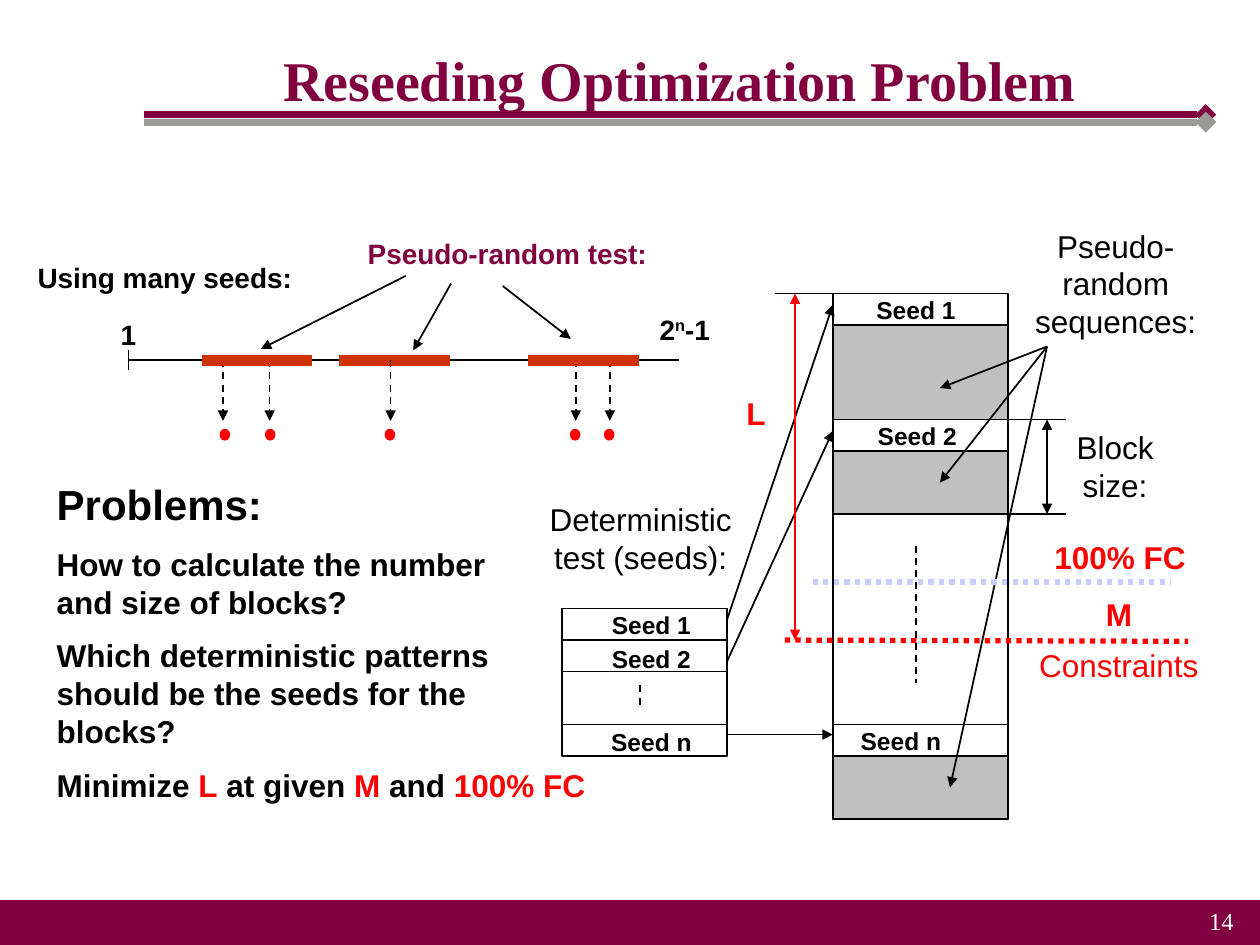
from dataclasses import dataclass
from typing import Optional

from pptx import Presentation
from pptx.dml.color import RGBColor
from pptx.enum.dml import MSO_LINE
from pptx.enum.shapes import MSO_CONNECTOR, MSO_SHAPE
from pptx.enum.text import MSO_ANCHOR, MSO_AUTO_SIZE, PP_ALIGN
from pptx.oxml.ns import qn
from pptx.util import Inches, Pt
from lxml.etree import SubElement

BLACK, WHITE, RED = "000000", "FFFFFF", "FF0000"
WINE, SILVER, GRAY, ORANGE, LILAC = "800040", "9B9A98", "C0C0C0", "CC3300", "CCCCFF"
DASH, DOTS = MSO_LINE.DASH, MSO_LINE.ROUND_DOT


@dataclass
class Line:
    x1: float
    y1: float
    x2: float
    y2: float
    color: str = BLACK
    width: float = 1
    dash: Optional[MSO_LINE] = None
    head: str = ""
    tail: str = ""


@dataclass
class Label:
    text: str
    left: float
    top: float
    width: float
    height: float
    size: float = 18
    color: str = BLACK
    bold: bool = False
    align: PP_ALIGN = PP_ALIGN.CENTER
    font: str = "Arial"


def rgb(color: str) -> RGBColor:
    return RGBColor.from_string(color)


def draw_line(item: Line) -> None:
    connector = slide.shapes.add_connector(
        MSO_CONNECTOR.STRAIGHT,
        Inches(item.x1), Inches(item.y1), Inches(item.x2), Inches(item.y2))
    connector.line.color.rgb = rgb(item.color)
    connector.line.width = Pt(item.width)
    if item.dash is not None:
        connector.line.dash_style = item.dash
    properties = connector._element.spPr
    outline = properties.find(qn("a:ln"))
    for tag, kind in (("a:headEnd", item.head), ("a:tailEnd", item.tail)):
        if kind:
            SubElement(outline, qn(tag), type=kind)
    SubElement(properties, qn("a:effectLst"))


def draw_arrow(x1: float, y1: float, x2: float, y2: float) -> None:
    draw_line(Line(x1, y1, x2, y2, tail="triangle"))


def draw_shape(kind: MSO_SHAPE, left: float, top: float, width: float, height: float,
               fill: str, outline: str = BLACK) -> None:
    shape = slide.shapes.add_shape(
        kind, Inches(left), Inches(top), Inches(width), Inches(height))
    shape.shadow.inherit = False
    shape.fill.solid()
    shape.fill.fore_color.rgb = rgb(fill)
    shape.line.color.rgb = rgb(outline)
    shape.line.width = Pt(1)


def add_run(paragraph, text: str, size: float, color: str, bold: bool, font: str = "Arial"):
    run = paragraph.add_run()
    run.text = text
    run.font.name, run.font.size, run.font.bold = font, Pt(size), bold
    run.font.color.rgb = rgb(color)
    return run


def draw_label(item: Label):
    box = slide.shapes.add_textbox(
        Inches(item.left), Inches(item.top), Inches(item.width), Inches(item.height))
    box.text_frame.word_wrap = True
    paragraph = box.text_frame.paragraphs[0]
    paragraph.alignment = item.align
    add_run(paragraph, item.text, item.size, item.color, item.bold, item.font)
    return paragraph


def place(holder, left: float, top: float, width: float, height: float):
    holder.left, holder.top = Inches(left), Inches(top)
    holder.width, holder.height = Inches(width), Inches(height)
    frame = holder.text_frame
    frame.auto_size, frame.word_wrap = MSO_AUTO_SIZE.NONE, True
    return frame


presentation = Presentation()
presentation.slide_width, presentation.slide_height = Inches(10), Inches(7.5)
slide = presentation.slides.add_slide(presentation.slide_layouts[1])

# Title, its double rule and the footer band
for rule_y, rule_color in ((0.91, WINE), (0.97, SILVER)):
    draw_line(Line(1.14, rule_y, 9.57, rule_y, rule_color, 4, tail="diamond"))
draw_shape(MSO_SHAPE.RECTANGLE, 0, 7.15, 10, 0.36, WINE, WINE)
draw_label(Label("14", 8.62, 7.14, 1.27, 0.52, 14, WHITE,
                 align=PP_ALIGN.RIGHT, font="Times New Roman"))
heading = place(slide.shapes.title, 0.51, 0, 9.77, 1.25)
heading.vertical_anchor = MSO_ANCHOR.MIDDLE
heading.paragraphs[0].alignment = PP_ALIGN.CENTER
add_run(heading.paragraphs[0], "Reseeding Optimization Problem", 32, WINE, True,
        "Times New Roman")

# List of problems: each paragraph is a size and its (text, colour) runs
problems = [
    (24, [("Problems:", BLACK)]),
    (18, [("How to calculate the number", BLACK), None, ("and size of blocks?", BLACK)]),
    (18, [("Which deterministic patterns should be the seeds for the blocks?", BLACK)]),
    (18, [("Minimize ", BLACK), ("L", RED), (" at given ", BLACK), ("M ", RED),
          ("and ", BLACK), ("100% FC", RED)]),
]
problem_list = place(slide.placeholders[1], 0.35, 3.75, 4.41, 2.76)
problem_list.vertical_anchor = MSO_ANCHOR.TOP
for index, (size, pieces) in enumerate(problems):
    paragraph = problem_list.add_paragraph() if index else problem_list.paragraphs[0]
    properties = paragraph._p.get_or_add_pPr()
    properties.set("marL", "0")
    properties.set("indent", "0")
    SubElement(properties, qn("a:buNone"))
    paragraph.alignment = PP_ALIGN.LEFT
    paragraph.space_before = Pt(9 if index else 0)
    for piece in pieces:
        if piece is None:
            paragraph.add_line_break()
        else:
            add_run(paragraph, piece[0], size, piece[1], True)

# Time axis with test segments and the patterns they hit
AXIS_Y, SEGMENT = 2.86, 0.88
draw_line(Line(1.02, AXIS_Y, 5.39, AXIS_Y))
draw_line(Line(1.02, 2.78, 1.02, 2.94))


def draw_segment(left: float) -> None:
    draw_line(Line(left, AXIS_Y, left + SEGMENT, AXIS_Y, ORANGE, 6))


draw_segment(2.69)
for drop_x, dot_left in ((1.77, 1.75), (2.14, 2.11), (3.1, 3.06), (4.57, 4.53), (4.84, 4.8)):
    draw_line(Line(drop_x, AXIS_Y, drop_x, 3.34, dash=DASH, tail="triangle"))
    draw_shape(MSO_SHAPE.OVAL, dot_left, 3.41, 0.07, 0.08, RED, RED)
for segment_left in (1.6, 4.19):
    draw_segment(segment_left)
for pointer in ((3.22, 2.19, 2.07, 2.77), (3.58, 2.25, 3.28, 2.78), (3.99, 2.27, 4.53, 2.69)):
    draw_arrow(*pointer)
draw_label(Label("Using many seeds:", 0.2, 2.02, 2.36, 0.37, 16, bold=True, align=PP_ALIGN.LEFT))
draw_label(Label("Pseudo-random test:", 2.82, 1.83, 2.57, 0.37, 16, WINE, True, PP_ALIGN.LEFT))
draw_label(Label("1", 0.8, 2.47, 0.44, 0.37, 16, bold=True))
axis_end = draw_label(Label("2", 5.11, 2.43, 0.65, 0.37, 16, bold=True))
exponent = add_run(axis_end, "n", 16, BLACK, True)
exponent.font._element.set("baseline", "30000")
add_run(axis_end, "-1", 16, BLACK, True)

# Stored seeds
STORE_LEFT, STORE_RIGHT = 4.46, 5.77
draw_shape(MSO_SHAPE.RECTANGLE, STORE_LEFT, 4.83, STORE_RIGHT - STORE_LEFT, 1.17, WHITE)
for row_y in (5.08, 5.33, 5.75):
    draw_line(Line(STORE_LEFT, row_y, STORE_RIGHT, row_y))
draw_line(Line(5.08, 5.44, 5.08, 5.61, dash=DASH))

# Full test sequence: each seed row is followed by its pseudo-random block
TEST_LEFT, TEST_RIGHT = 6.61, 8
TEST_WIDTH = TEST_RIGHT - TEST_LEFT
draw_shape(MSO_SHAPE.RECTANGLE, TEST_LEFT, 2.33, TEST_WIDTH, 4.17, WHITE)
for block_top, block_height in ((2.58, 0.75), (3.58, 0.5), (6, 0.5)):
    draw_shape(MSO_SHAPE.RECTANGLE, TEST_LEFT, block_top, TEST_WIDTH, block_height, GRAY)
draw_line(Line(TEST_LEFT, 5.75, TEST_RIGHT, 5.75))
draw_line(Line(7.27, 4.33, 7.27, 5.42, dash=DASH))
for stored_y, used_y in ((4.92, 2.42), (5.25, 3.42), (5.83, 5.83)):
    draw_arrow(STORE_RIGHT, stored_y, TEST_LEFT, used_y)
for block_x, block_y in ((7.46, 3.08), (7.46, 3.83), (7.54, 6.25)):
    draw_arrow(8.31, 2.75, block_x, block_y)
for name, left, top in (("Seed 1", 4.63, 4.79), ("Seed 2", 4.63, 5.06), ("Seed n", 4.63, 5.72),
                        ("Seed 1", 6.73, 2.29), ("Seed 2", 6.74, 3.29), ("Seed n", 6.61, 5.71)):
    draw_label(Label(name, left, top, 1.08, 0.33, 14, bold=True))

# Dimensions and limits
for measure in (
    Line(7.77, 3.33, 8.46, 3.33),
    Line(7.77, 4.08, 8.46, 4.08),
    Line(8.31, 3.33, 8.31, 4.08, head="triangle", tail="triangle"),
    Line(6.23, 5.08, 9.43, 5.09, RED, 3, DOTS),
    Line(6.15, 2.33, TEST_LEFT, 2.33),
    Line(6.31, 2.33, 6.31, 5.08, RED, head="triangle", tail="triangle"),
    Line(6.45, 4.62, 9.29, 4.62, LILAC, 3, DOTS),
):
    draw_line(measure)
for caption in (
    Label("Deterministic test (seeds):", 4.21, 3.92, 1.75, 0.7),
    Label("Pseudo-random sequences:", 8.07, 1.75, 1.57, 1),
    Label("Block size:", 8.31, 3.35, 1.08, 0.7),
    Label("Constraints", 8.11, 5.08, 1.54, 0.4, color=RED),
    Label("L", 5.46, 3.08, 1.08, 0.4, color=RED, bold=True),
    Label("M", 8.34, 4.67, 1.08, 0.4, color=RED, bold=True),
    Label("100% FC", 8.27, 4.22, 1.38, 0.4, color=RED, bold=True, align=PP_ALIGN.LEFT),
):
    draw_label(caption)

presentation.save("out.pptx")
